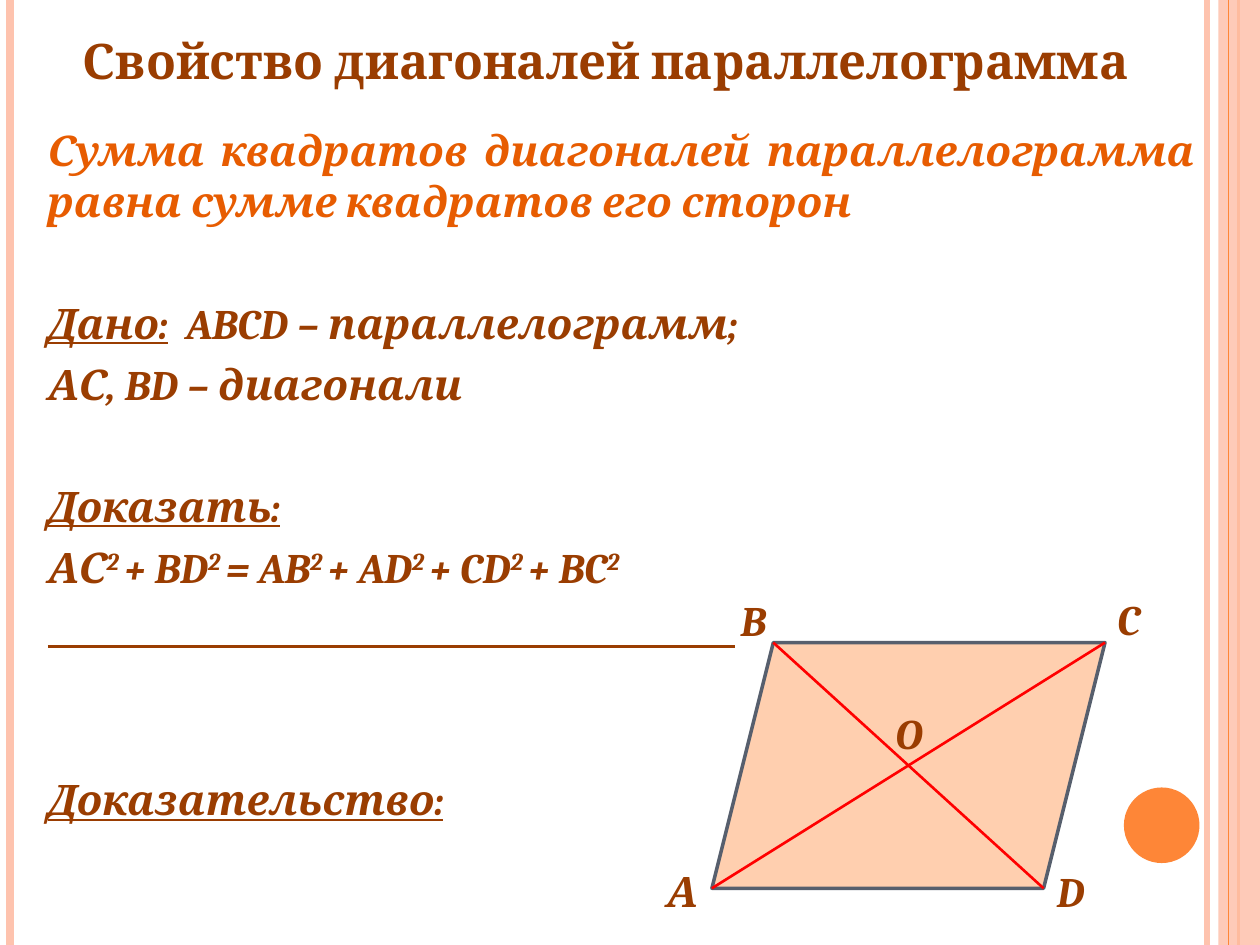
from pptx import Presentation
from pptx.dml.color import RGBColor
from pptx.enum.shapes import MSO_CONNECTOR as Connector, MSO_SHAPE as Shape
from pptx.enum.text import PP_ALIGN as Align
from pptx.oxml.ns import qn
from pptx.util import Inches, Pt
from lxml.etree import SubElement

BROWN = RGBColor(0x9A, 0x3D, 0x01)
RUST = RGBColor(0xE7, 0x5C, 0x01)
ORANGE = RGBColor(0xFE, 0x86, 0x37)
PINK = RGBColor(0xFE, 0xC3, 0xAE)
PEACH = RGBColor(0xFF, 0xCF, 0xAF)
SLATE = RGBColor(0x57, 0x5F, 0x6D)
RED = RGBColor(0xFF, 0x00, 0x00)

deck = Presentation()
deck.slide_width, deck.slide_height = Inches(10), Inches(7.5)
COL, ROW = deck.slide_width / 100, deck.slide_height / 75  # 100 x 75 grid
slide = deck.slides.add_slide(deck.slide_layouts[6])
shapes = slide.shapes


def write(paragraph, text, size=24, color=BROWN, italic=True,
          underline=False, raised=False):
    run = paragraph.add_run()
    run.text = text
    font = run.font
    font.name, font.size, font.bold = "Cambria", Pt(size), True
    font.italic, font.underline = italic, underline
    font.color.rgb = color
    if raised:
        run._r.get_or_add_rPr().set("baseline", "30000")


def rule(x1, y1, x2, y2, color, width):
    line = shapes.add_connector(Connector.STRAIGHT, int(x1 * COL), int(y1 * ROW),
                                int(x2 * COL), int(y2 * ROW))
    line.line.color.rgb, line.line.width = color, Pt(width)
    SubElement(line._element.spPr, qn("a:effectLst"))


# Side stripes, band and circle
for x, color, width in [(95.8, PINK, 3), (0.8, PINK, 4.5), (98.3, ORANGE, 1.5)]:
    rule(x, 0, x, 75, color, width)
band = shapes.add_shape(Shape.RECTANGLE, int(96.7 * COL), 0,
                        int(3.3 * COL), deck.slide_height)
circle = shapes.add_shape(Shape.OVAL, int(89.2 * COL), int(62.5 * ROW),
                          int(6 * COL), int(6 * ROW))
for accent, color in [(band, PINK), (circle, ORANGE)]:
    accent.shadow.inherit = False
    accent.fill.solid()
    accent.fill.fore_color.rgb = color
    accent.line.fill.background()
band_color = band._element.spPr.find(qn("a:solidFill"))[0]
SubElement(band_color, qn("a:alpha")).set("val", "87000")
rule(97.5, 0, 97.5, 75, ORANGE, 0.75)

# Theorem, given and to prove: (space before, [(text, format), ...])
under, power = {"underline": True}, {"raised": True}
formula = [("АС", {})]
for term in ["+ BD", "= AB", "+ AD", "+ CD", "+ BC"]:
    formula += [("2 ", power), (term, {})]
formula.append(("2", power))
statement = [
    (6, [("Сумма квадратов диагоналей параллелограмма равна сумме "
          "квадратов его сторон", {"color": RUST})]),
    (41, [("Дано:", under), ("  ABCD – параллелограмм;", {})]),
    (6, [("АС, BD – диагонали", {})]),
    (41, [("Доказать:", under)]),
    (6, formula),
    (104, [("Доказательство:", under)]),
]
body = shapes.add_textbox(int(2.8 * COL), int(9.4 * ROW),
                          int(93 * COL), int(57.6 * ROW)).text_frame
body.word_wrap = True
for i, (gap, runs) in enumerate(statement):
    paragraph = body.add_paragraph() if i else body.paragraphs[0]
    paragraph.alignment, paragraph.space_before = Align.JUSTIFY, Pt(gap)
    for text, style in runs:
        write(paragraph, text, **style)
rule(3.8, 51.3, 58.3, 51.3, BROWN, 1.5)

# Parallelogram with its diagonals
LEFT, RIGHT, TOP, BOTTOM = 56.5, 87.7, 51, 70.5
SLANT = (BOTTOM - TOP) / 4
figure = shapes.add_shape(Shape.PARALLELOGRAM, int(LEFT * COL), int(TOP * ROW),
                          int((RIGHT - LEFT) * COL), int((BOTTOM - TOP) * ROW))
figure.shadow.inherit = False
figure.fill.solid()
figure.fill.fore_color.rgb = PEACH
figure.line.color.rgb, figure.line.width = SLATE, Pt(2)
rule(RIGHT, TOP, LEFT, BOTTOM, RED, 1.5)
rule(RIGHT - SLANT, BOTTOM, LEFT + SLANT, TOP, RED, 1.5)

# Vertex labels and title
for text, x, y, w, h, style in [
    ("D", 82.9, 68.2, 4.8, 5, {}),
    ("C", 87.7, 46.6, 4.6, 5, {}),
    ("А", 51.9, 68.2, 4.5, 5, {}),
    ("B", 57.8, 46.7, 4.6, 5, {}),
    ("O", 70.1, 55.7, 4.8, 5, {}),
    ("Свойство диагоналей параллелограмма", 5.6, 1.9, 86.3, 5.7,
     {"size": 28, "italic": False}),
]:
    label = shapes.add_textbox(int(x * COL), int(y * ROW),
                               int(w * COL), int(h * ROW)).text_frame
    label.word_wrap = False
    write(label.paragraphs[0], text, **style)

deck.save("out.pptx")
